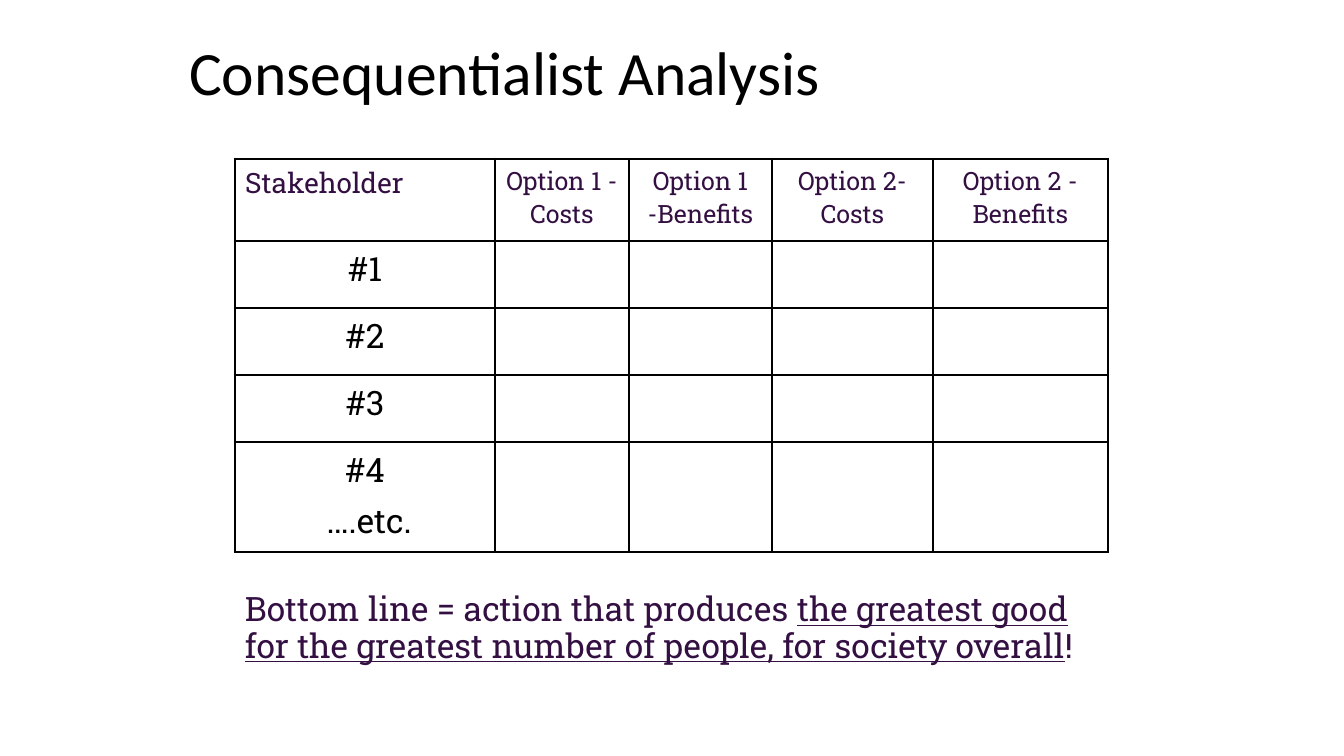
from lxml import etree
from pptx import Presentation
from pptx.dml.color import RGBColor
from pptx.enum.text import MSO_ANCHOR, PP_ALIGN
from pptx.oxml.ns import qn
from pptx.util import Emu, Pt

LEFT, CENTER = PP_ALIGN.LEFT, PP_ALIGN.CENTER
TOP, MIDDLE = MSO_ANCHOR.TOP, MSO_ANCHOR.MIDDLE
EMU_PER_PX = 914400 / 100.8
COLORS = {"ink": "000000", "plum": "330F42"}
FORMATS = {
    "title": {"name": "Calibri", "size": Pt(44), "color": "ink"},
    "corner": {"name": "Roboto Slab", "size": Pt(20), "color": "plum"},
    "option": {"name": "Roboto Slab", "size": Pt(18), "color": "plum"},
    "stakeholder": {"name": "Roboto Slab", "size": Pt(24), "color": "ink"},
    "conclusion": {"name": "Roboto Slab", "size": Pt(24), "color": "plum"},
}
COLUMN_WIDTHS = [260, 134, 143, 161, 175]
ROW_HEIGHTS = [82, 67, 67, 67, 110]
HEADERS = ["Stakeholder", "Option 1 - Costs", "Option 1 -Benefits",
           "Option 2- Costs", "Option 2 - Benefits"]
STAKEHOLDERS = [["#1"], ["#2"], ["#3"], ["#4", " ….etc."]]
CONCLUSION = [
    ("Bottom line = action that produces ", False),
    ("the greatest good for the greatest number of people, for society overall", True),
    ("!", False),
]


def px(length):
    """Turn pixels into EMU."""
    return Emu(round(length * EMU_PER_PX))


def add_span(para, text, kind, **extra):
    """Add a run with the named text format."""
    span = para.add_run()
    span.text = text
    for key, value in {**FORMATS[kind], **extra}.items():
        if key == "color":
            span.font.color.rgb = RGBColor.from_string(COLORS[value])
        else:
            setattr(span.font, key, value)


def place(shape, left, top, width, height):
    """Position a shape in pixels."""
    shape.left, shape.top = px(left), px(top)
    shape.width, shape.height = px(width), px(height)


def add_title(page, text):
    """Fill and move the title placeholder."""
    title = page.shapes.title
    place(title, 28, 25, 1178, 101)
    frame = title.text_frame
    frame.word_wrap = True
    frame.vertical_anchor = MIDDLE
    frame.margin_left = px(161)
    para = frame.paragraphs[0]
    para.alignment, para.line_spacing = LEFT, 0.9
    add_span(para, text, "title")


def fill_cell(cell, lines, kind, alignment):
    """Write one paragraph per line into a cell."""
    frame = cell.text_frame
    for index, line in enumerate(lines):
        para = frame.add_paragraph() if index else frame.paragraphs[0]
        para.alignment = alignment
        if index:
            para.space_before = Pt(5)
        add_span(para, line, kind)


def set_borders(cell, outer_sides):
    """Draw thick outer and thin inner cell borders."""
    properties = cell._tc.get_or_add_tcPr()
    for index, side in enumerate("LRTB"):
        width = Pt(2.25 if side in outer_sides else 1)
        line = etree.Element(qn(f"a:ln{side}"), w=str(int(width)))
        fill = etree.SubElement(line, qn("a:solidFill"))
        etree.SubElement(fill, qn("a:srgbClr"), val=COLORS["ink"])
        properties.insert(index, line)


def add_analysis_table(page):
    """Add the grid of stakeholders and options."""
    row_count, column_count = len(ROW_HEIGHTS), len(COLUMN_WIDTHS)
    table = page.shapes.add_table(
        row_count, column_count, px(235), px(159),
        px(sum(COLUMN_WIDTHS)), px(sum(ROW_HEIGHTS))).table
    table.first_row = table.horz_banding = False
    for column, width in zip(table.columns, COLUMN_WIDTHS):
        column.width = px(width)
    for row, height in zip(table.rows, ROW_HEIGHTS):
        row.height = px(height)
    for r in range(row_count):
        for c in range(column_count):
            cell = table.cell(r, c)
            cell.fill.background()
            edges = {"L": c == 0, "R": c == column_count - 1,
                     "T": r == 0, "B": r == row_count - 1}
            set_borders(cell, [side for side, outer in edges.items() if outer])
    for c, header in enumerate(HEADERS):
        kind, alignment = ("option", CENTER) if c else ("corner", LEFT)
        fill_cell(table.cell(0, c), [header], kind, alignment)
    for r, lines in enumerate(STAKEHOLDERS, start=1):
        fill_cell(table.cell(r, 0), lines, "stakeholder", CENTER)


def add_conclusion(page):
    """Add the closing sentence with its underlined part."""
    box = page.shapes.add_textbox(px(235), px(588), px(882), px(152))
    frame = box.text_frame
    frame.word_wrap = True
    frame.vertical_anchor = TOP
    para = frame.paragraphs[0]
    para.line_spacing = 0.9
    for text, underlined in CONCLUSION:
        add_span(para, text, "conclusion", underline=underlined)


def main():
    """Build and save the slide."""
    deck = Presentation()
    deck.slide_width, deck.slide_height = px(1344), px(756)
    page = deck.slides.add_slide(deck.slide_layouts[5])
    add_title(page, "Consequentialist Analysis")
    add_analysis_table(page)
    add_conclusion(page)
    deck.save("out.pptx")


if __name__ == "__main__":
    main()
